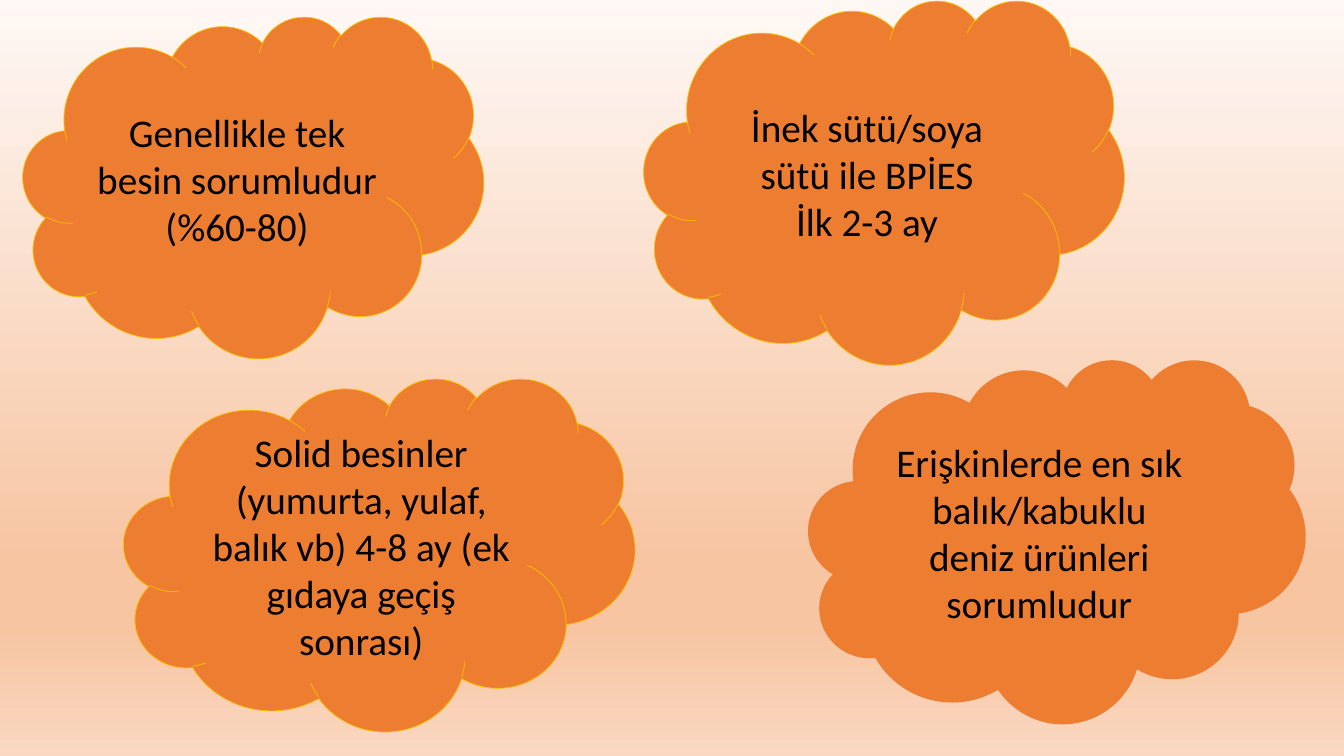
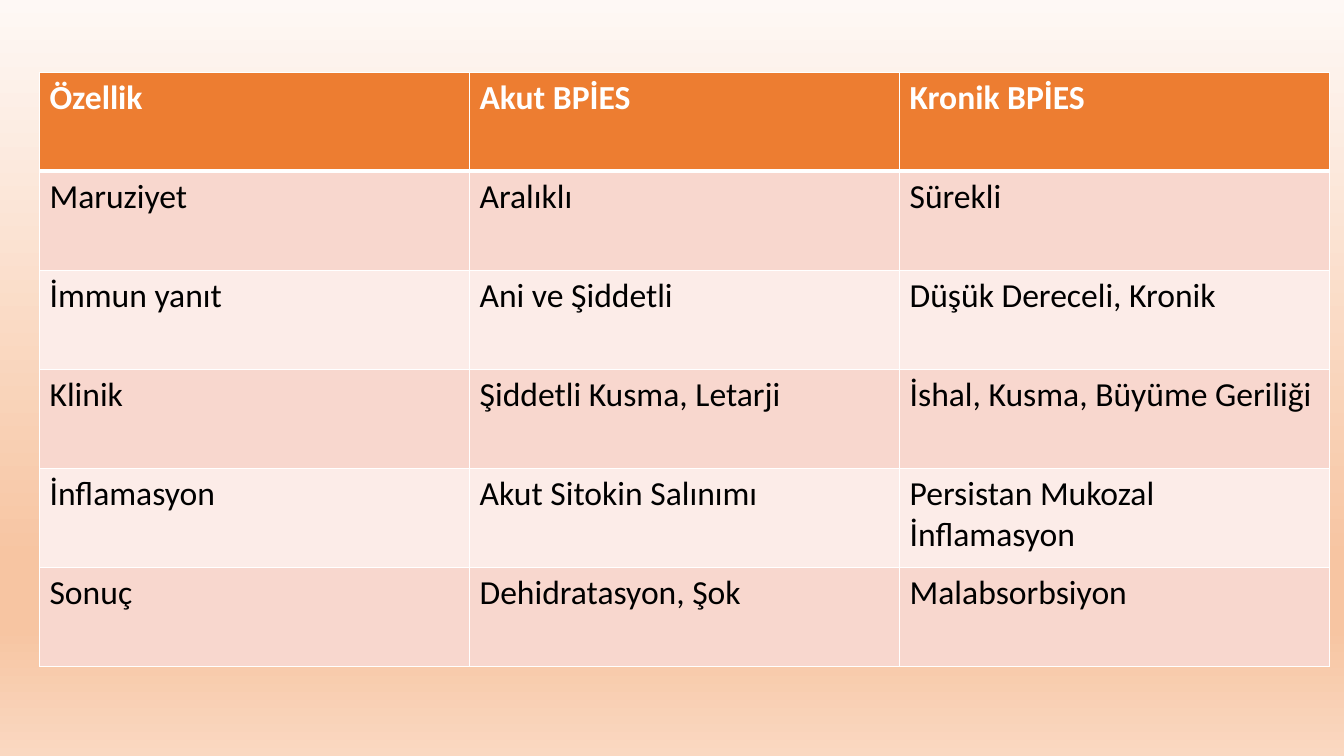
from lxml.etree import SubElement
from pptx import Presentation
from pptx.dml.color import RGBColor
from pptx.enum.shapes import MSO_SHAPE
from pptx.enum.text import MSO_ANCHOR, PP_ALIGN
from pptx.oxml.ns import qn
from pptx.util import Pt

FONT = "Calibri"
ORANGE = RGBColor(0xED, 0x7D, 0x31)
GOLD = RGBColor(0xFF, 0xC0, 0x00)
BLACK = RGBColor(0x00, 0x00, 0x00)
WHITE = RGBColor(0xFF, 0xFF, 0xFF)
DARK_BAND = RGBColor(0xF8, 0xD7, 0xCE)
LIGHT_BAND = RGBColor(0xFC, 0xEC, 0xE8)
PALE = RGBColor(0xFE, 0xF8, 0xF5)
PEACH = RGBColor(0xF7, 0xC5, 0xA2)
SAND = RGBColor(0xFA, 0xD8, 0xC1)

# Percent along the background, from top to bottom
BACKGROUND_STOPS = [(0, PALE), (74, PEACH), (83, PEACH), (100, SAND)]

# Left, top, width, height, outline colour, paragraphs
CLOUDS = [
    (88.5, 270, 365, 252, GOLD,
     ["Solid besinler", "(yumurta, yulaf, balık vb) 4-8 ay (ek gıdaya geçiş sonrası)"]),
    (460, 0, 343, 260, GOLD, ["İnek sütü/soya sütü ile BPİES", "İlk 2-3 ay"]),
    (16.5, 11.5, 329, 244, GOLD, ["Genellikle tek besin sorumludur", "(%60-80)"]),
    (577.5, 256.5, 355, 260, None,
     ["Erişkinlerde en sık balık/kabuklu deniz ürünleri sorumludur"]),
]

COMPARISON = [
    ("Özellik", "Akut BPİES", "Kronik BPİES"),
    ("Maruziyet", "Aralıklı", "Sürekli"),
    ("İmmun yanıt", "Ani ve Şiddetli", "Düşük Dereceli, Kronik"),
    ("Klinik", "Şiddetli Kusma, Letarji", "İshal, Kusma, Büyüme Geriliği"),
    ("İnflamasyon", "Akut Sitokin Salınımı", "Persistan Mukozal İnflamasyon"),
    ("Sonuç", "Dehidratasyon, Şok", "Malabsorbsiyon"),
]
COLUMN_WIDTH, ROW_HEIGHT = 307.2, 70.8


def set_background(master):
    """Give every slide the same vertical gradient."""
    fill = master.background.fill
    fill.gradient()
    fill.gradient_angle = 270
    stop_list = next(master.element.iter(qn("a:gsLst")))
    for stop in list(stop_list):
        stop_list.remove(stop)
    for percent, color in BACKGROUND_STOPS:
        stop = SubElement(stop_list, qn("a:gs"), pos=str(percent * 1000))
        SubElement(stop, qn("a:srgbClr"), val=str(color))


def add_slide(presentation):
    return presentation.slides.add_slide(presentation.slide_layouts[6])


def style_font(paragraph, size, color, bold=False):
    font = paragraph.font
    font.name, font.size, font.bold = FONT, Pt(size), bold
    font.color.rgb = color


def add_cloud(slide, left, top, width, height, outline, lines):
    shape = slide.shapes.add_shape(
        MSO_SHAPE.CLOUD, Pt(left), Pt(top), Pt(width), Pt(height))
    shape.shadow.inherit = False
    shape.fill.solid()
    shape.fill.fore_color.rgb = ORANGE
    if outline is None:
        shape.line.fill.background()
    else:
        shape.line.color.rgb = outline
        shape.line.width = Pt(0.5)
    frame = shape.text_frame
    frame.word_wrap = True
    frame.vertical_anchor = MSO_ANCHOR.MIDDLE
    frame.text = "\n".join(lines)
    for paragraph in frame.paragraphs:
        paragraph.alignment = PP_ALIGN.CENTER
        style_font(paragraph, 28, BLACK)


def set_borders(cell, top, bottom):
    properties = cell._tc.get_or_add_tcPr()
    for side, width in (("L", 1), ("R", 1), ("T", top), ("B", bottom)):
        line = SubElement(properties, qn(f"a:ln{side}"), w=str(Pt(width)))
        fill = SubElement(line, qn("a:solidFill"))
        SubElement(fill, qn("a:srgbClr"), val=str(WHITE))


def add_comparison_table(slide, left, top, rows):
    row_count, column_count = len(rows), len(rows[0])
    table = slide.shapes.add_table(
        row_count, column_count, Pt(left), Pt(top),
        Pt(COLUMN_WIDTH * column_count), Pt(ROW_HEIGHT * row_count)).table
    for column in table.columns:
        column.width = Pt(COLUMN_WIDTH)
    for index, texts in enumerate(rows):
        table.rows[index].height = Pt(ROW_HEIGHT)
        is_header = index == 0
        band = ORANGE if is_header else DARK_BAND if index % 2 else LIGHT_BAND
        for column_index, text in enumerate(texts):
            cell = table.cell(index, column_index)
            # A thick rule parts the header from the body
            set_borders(cell, top=3 if index == 1 else 1, bottom=3 if is_header else 1)
            cell.fill.solid()
            cell.fill.fore_color.rgb = band
            cell.text = text
            style_font(cell.text_frame.paragraphs[0], 24,
                       WHITE if is_header else BLACK, is_header)


def main():
    presentation = Presentation()
    presentation.slide_width, presentation.slide_height = Pt(960), Pt(540)
    set_background(presentation.slide_master)

    # Foods responsible
    foods_slide = add_slide(presentation)
    for cloud in CLOUDS:
        add_cloud(foods_slide, *cloud)

    # Acute and chronic forms
    add_comparison_table(add_slide(presentation), 28.2, 51.6, COMPARISON)

    presentation.save("out.pptx")


if __name__ == "__main__":
    main()
